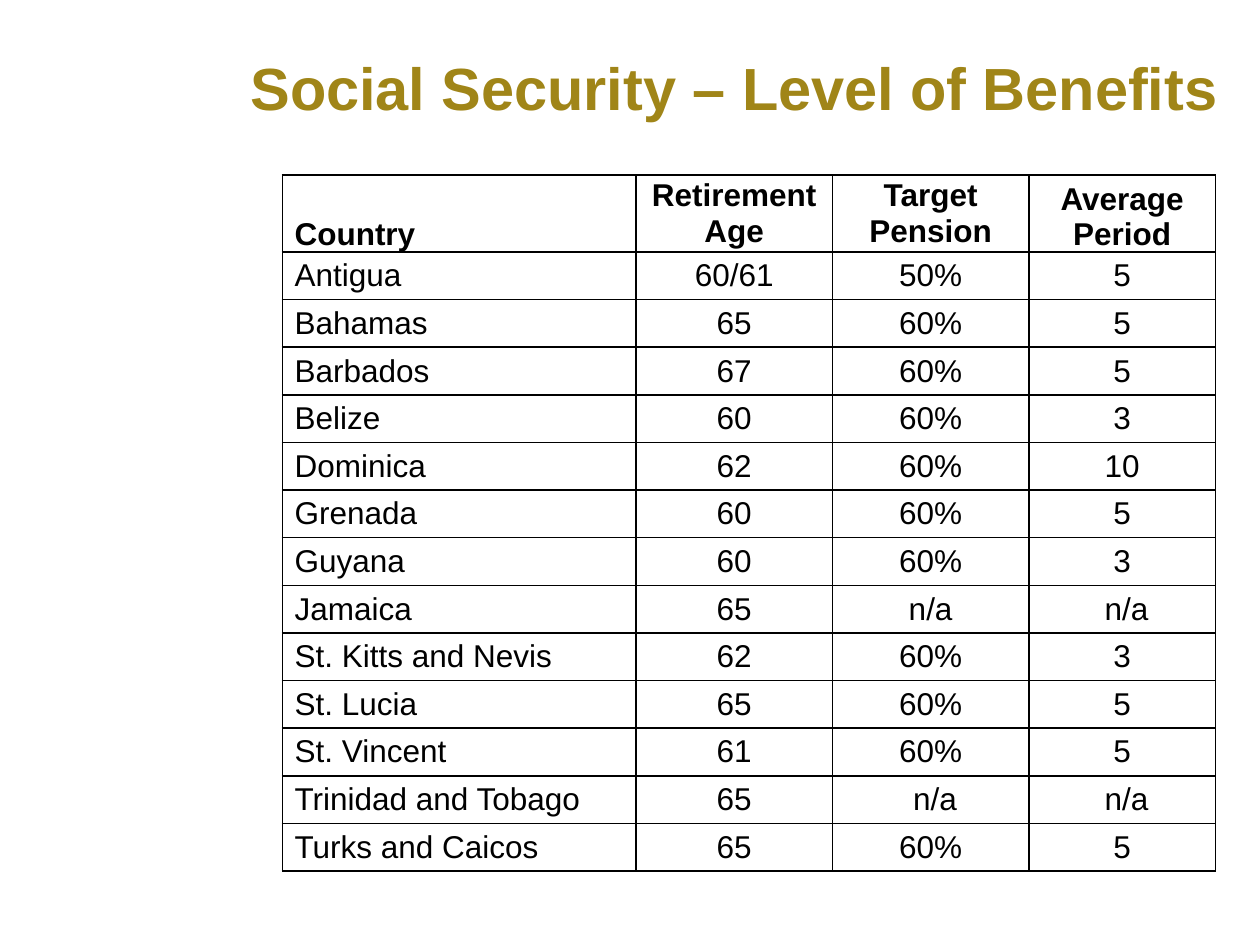
from lxml.etree import SubElement
from pptx import Presentation
from pptx.dml.color import RGBColor
from pptx.enum.text import MSO_VERTICAL_ANCHOR as Anchor, PP_PARAGRAPH_ALIGNMENT as Align
from pptx.oxml.ns import qn
from pptx.util import Cm, Pt

COLORS = {"title": "A08518", "text": "000000", "border": "000000"}


def write_text(frame, text, size=18, color="text", bold=False, align=Align.LEFT, indent=0):
    paragraph = frame.paragraphs[0]
    paragraph.alignment = align
    if indent:
        paragraph.level = 1
        properties = paragraph._p.get_or_add_pPr()
        properties.set("marL", str(Cm(indent)))
        properties.set("indent", "0")
    run = paragraph.add_run()
    run.text = text
    run.font.name = "Arial"
    run.font.size = Pt(size)
    run.font.bold = bold
    run.font.color.rgb = RGBColor.from_string(COLORS[color])


def draw_borders(cell, width=1):
    properties = cell._tc.get_or_add_tcPr()
    for position, side in enumerate(("lnL", "lnR", "lnT", "lnB")):
        line = properties.makeelement(qn(f"a:{side}"), {"w": str(Pt(width))})
        fill = SubElement(line, qn("a:solidFill"))
        SubElement(fill, qn("a:srgbClr"), val=COLORS["border"])
        properties.insert(position, line)


presentation = Presentation()
presentation.slide_width = Cm(25.4)
presentation.slide_height = Cm(19.05)
slide = presentation.slides.add_slide(presentation.slide_layouts[6])

# Title
title = slide.shapes.add_textbox(Cm(4.8), Cm(0.33), Cm(20.6), Cm(2.85)).text_frame
title.word_wrap = True
title.vertical_anchor = Anchor.MIDDLE
write_text(title, "Social Security – Level of Benefits", size=34, color="title", bold=True)

# Benefits by country
benefits = [
    ("Country", "Retirement Age", "Target Pension", "Average Period"),
    ("Antigua", "60/61", "50%", "5"),
    ("Bahamas", "65", "60%", "5"),
    ("Barbados", "67", "60%", "5"),
    ("Belize", "60", "60%", "3"),
    ("Dominica", "62", "60%", "10"),
    ("Grenada", "60", "60%", "5"),
    ("Guyana", "60", "60%", "3"),
    ("Jamaica", "65", "n/a", " n/a"),
    ("St. Kitts and Nevis", "62", "60%", "3"),
    ("St. Lucia", "65", "60%", "5"),
    ("St. Vincent", "61", "60%", "5"),
    ("Trinidad and Tobago", "65", " n/a", " n/a"),
    ("Turks and Caicos", "65", "60%", "5"),
]
column_widths = (7.13, 3.96, 3.96, 3.76)
header_height, row_height = 1.55, 0.96
table_height = header_height + row_height * (len(benefits) - 1)

# Table
table = slide.shapes.add_table(
    len(benefits), len(column_widths),
    Cm(5.69), Cm(3.53), Cm(sum(column_widths)), Cm(table_height),
).table
table.first_row = False
table.horz_banding = False
for column, width in zip(table.columns, column_widths):
    column.width = Cm(width)

for row_index, values in enumerate(benefits):
    is_header = row_index == 0
    table.rows[row_index].height = Cm(header_height if is_header else row_height)
    for column_index, value in enumerate(values):
        is_country = column_index == 0
        cell = table.cell(row_index, column_index)
        cell.margin_left = cell.margin_right = cell.margin_top = cell.margin_bottom = 0
        at_bottom = is_header and column_index in (0, 3)
        cell.vertical_anchor = Anchor.BOTTOM if at_bottom else Anchor.MIDDLE
        cell.fill.background()
        draw_borders(cell)
        write_text(
            cell.text_frame, value, bold=is_header,
            align=Align.LEFT if is_country else Align.CENTER,
            indent=0.25 if is_country else 0,
        )

presentation.save("out.pptx")
